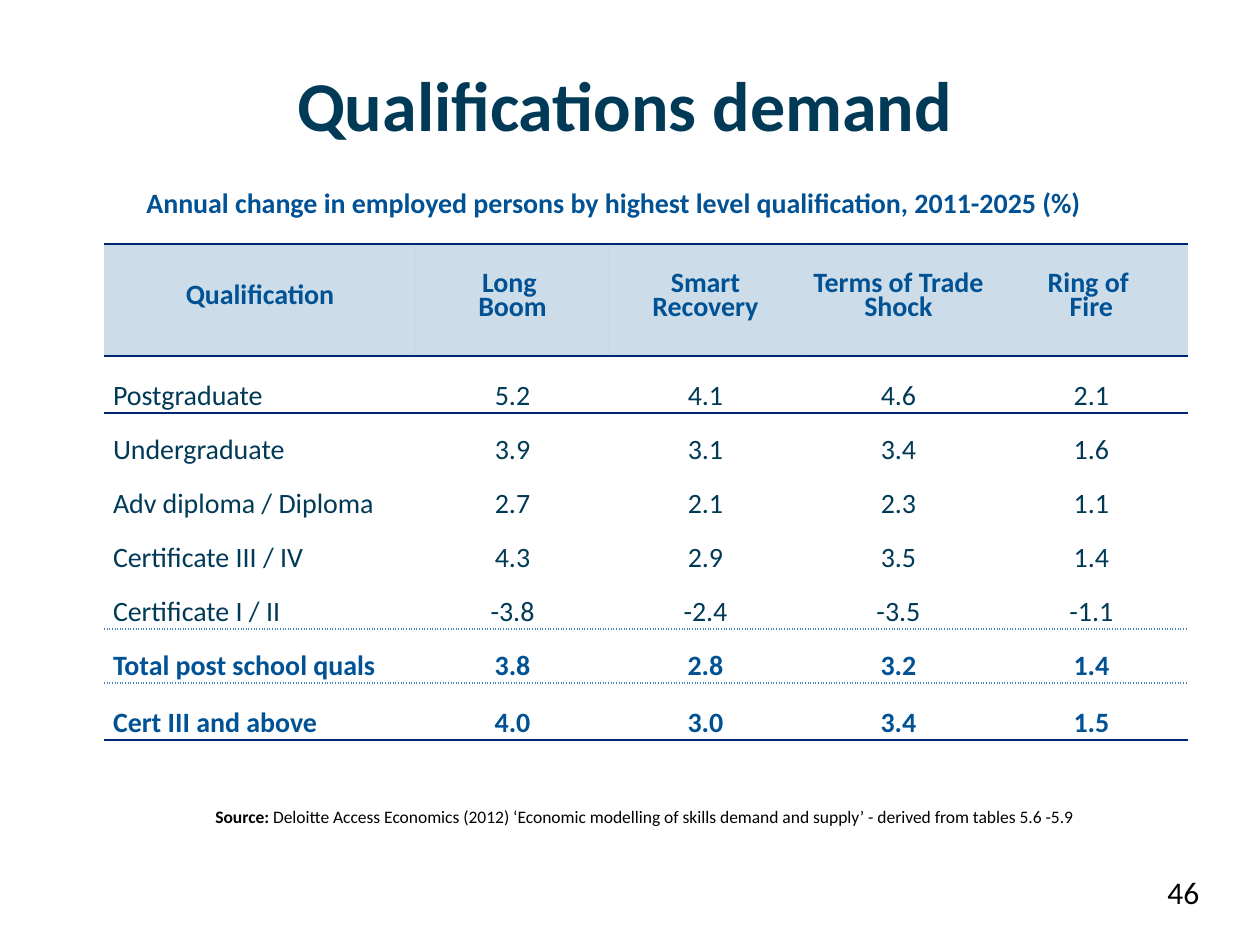
from lxml import etree
from pptx import Presentation
from pptx import util as u
from pptx.dml.color import RGBColor
from pptx.enum import text
from pptx.oxml.ns import qn

DARK = RGBColor(0x00, 0x3A, 0x57)
BLUE = RGBColor(0x00, 0x52, 0x95)
NAVY = RGBColor(0x00, 0x27, 0x76)
SKY = RGBColor(0x4F, 0x81, 0xBD)
BLACK = RGBColor(0, 0, 0)
PX = 914400 / 126
PLAIN = "{2D5ABB26-0587-4C30-8999-92F81FD0307C}"  # table style without grid

ROWS = [
    ["Qualification", "Long \vBoom", "Smart Recovery", "Terms of Trade Shock",
     "Ring of \vFire"],
    ["Postgraduate", "5.2", "4.1", "4.6", "2.1"],
    ["Undergraduate", "3.9", "3.1", "3.4", "1.6"],
    ["Adv diploma / Diploma", "2.7", "2.1", "2.3", "1.1"],
    ["Certificate III / IV", "4.3", "2.9", "3.5", "1.4"],
    ["Certificate I / II", "-3.8", "-2.4", "-3.5", "-1.1"],
    ["Total post school quals", "3.8", "2.8", "3.2", "1.4"],
    ["Cert III and above", "4.0", "3.0", "3.4", "1.5"],
]
WIDTHS = [312] + [193] * 4
HEIGHTS = [112, 57] + [54] * 5 + [57]
# Rule under each row, and the one above the header
SOLID, DOTS = (NAVY, "solid"), (SKY, "sysDot")
RULES = {-1: SOLID, 0: SOLID, 5: DOTS, 6: DOTS, 7: SOLID}


def box(*sides):
    return [u.Emu(round(n * PX)) for n in sides]


def style(par, size, color, bold=False):
    for run in par.runs:
        font = run.font
        font.name, font.size, font.bold = "Calibri", u.Pt(size), bold
        font.color.rgb = color


prs = Presentation()
prs.slide_width, prs.slide_height = box(1260, 945)
slide = prs.slides.add_slide(prs.slide_layouts[5])

title = slide.shapes.title
title.left, title.top, title.width, title.height = box(280, 55, 689, 97)
frame = title.text_frame
frame.text = "Qualifications demand"
frame.word_wrap = False
frame.vertical_anchor = text.MSO_ANCHOR.TOP
frame.paragraphs[0].alignment = text.PP_ALIGN.CENTER
style(frame.paragraphs[0], 40, DARK, True)

# Table
grid = slide.shapes.add_table(8, 5, *box(104, 244, 1084, 496)).table
props = grid._tbl.tblPr
props.find(qn("a:tableStyleId")).text = PLAIN
grid.first_row = grid.horz_banding = False
for col, width in zip(grid.columns, WIDTHS):
    col.width = box(width)[0]
for row, height in zip(grid.rows, HEIGHTS):
    row.height = box(height)[0]

for r, row in enumerate(ROWS):
    head, total = r == 0, r > 5
    for c, word in enumerate(row):
        cell = grid.cell(r, c)
        cell.text = word
        cell.margin_left, cell.margin_right = box(9, 9)
        cell.margin_top = cell.margin_bottom = 0
        cell.vertical_anchor = (text.MSO_ANCHOR.MIDDLE if head
                                else text.MSO_ANCHOR.BOTTOM)
        par = cell.text_frame.paragraphs[0]
        par.line_spacing = u.Pt(13.8) if head else 1.15
        if head or c:
            par.alignment = text.PP_ALIGN.CENTER
        style(par, 16, BLUE if head or total else DARK, head or total)

        tcpr = cell._tc.get_or_add_tcPr()
        for edge, rule in (("a:lnT", r - 1), ("a:lnB", r)):
            if rule in RULES:
                color, dash = RULES[rule]
                line = etree.SubElement(tcpr, qn(edge), w="12700")
                fill = etree.SubElement(line, qn("a:solidFill"))
                etree.SubElement(fill, qn("a:srgbClr"), val=str(color))
                etree.SubElement(line, qn("a:prstDash"), val=dash)
        if head:
            cell.fill.solid()
            cell.fill.fore_color.rgb = BLUE
            tint = tcpr.find(qn("a:solidFill")).find(qn("a:srgbClr"))
            etree.SubElement(tint, qn("a:alpha"), val="20000")
        else:
            cell.fill.background()

# Heading, source and page number
MID, TOP = text.MSO_ANCHOR.MIDDLE, text.MSO_ANCHOR.TOP
NOTES = [
    ((134, 179, 1012, 47), MID, 16, BLUE, True,
     ["Annual change in employed persons by highest level qualification, "
      "2011-2025 (%)"]),
    ((203, 799, 932, 34), MID, 10, BLACK, False,
     ["Source: ", "Deloitte Access Economics (2012) ‘Economic modelling of "
      "skills demand and supply’ - derived from tables 5.6 -5.9"]),
    ((1155, 867, 105, 78), TOP, 18, BLACK, False, ["46"]),
]
for place, anchor, size, color, bold, parts in NOTES:
    frame = slide.shapes.add_textbox(*box(*place)).text_frame
    frame.word_wrap = True
    frame.vertical_anchor = anchor
    par = frame.paragraphs[0]
    for part in parts:
        par.add_run().text = part
    style(par, size, color, bold)
    if len(parts) > 1:
        par.runs[0].font.bold = True

prs.save("out.pptx")
